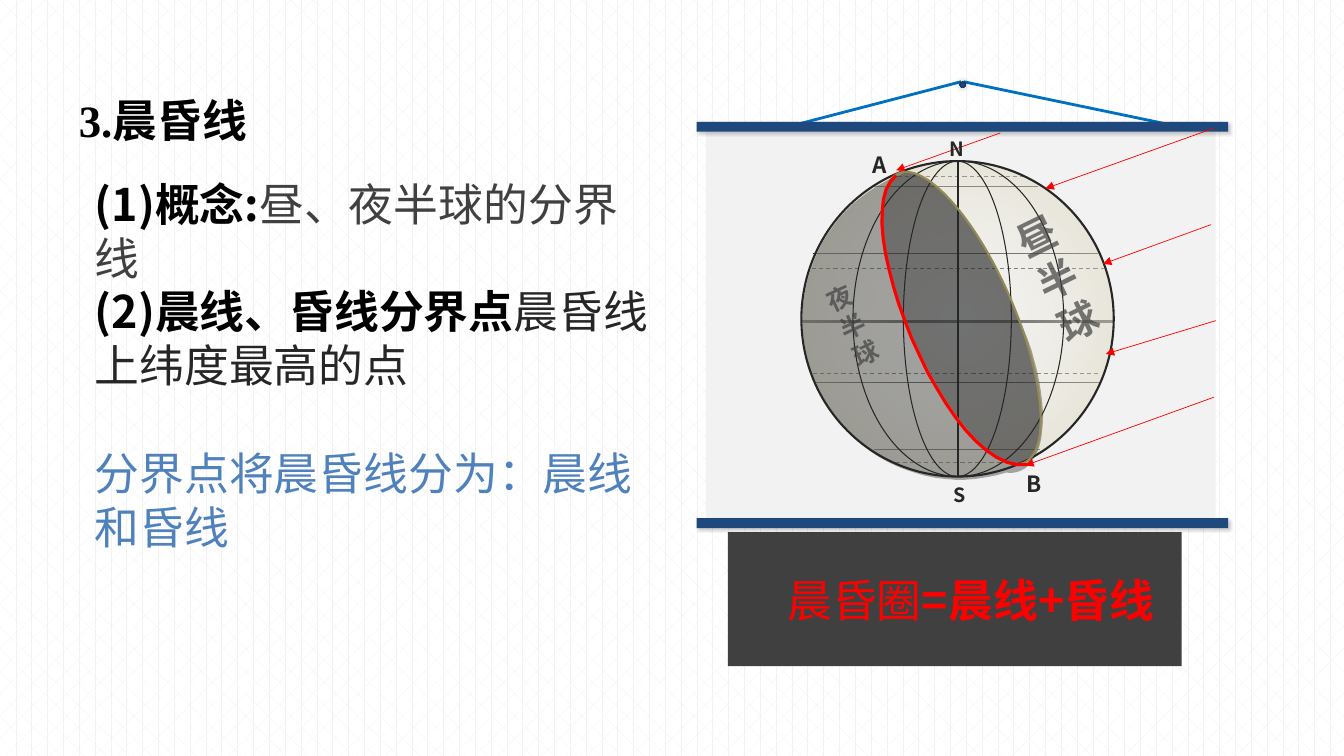
from lxml import etree
from pptx import Presentation
from pptx.dml.color import RGBColor
from pptx.enum.dml import MSO_LINE, MSO_PATTERN
from pptx.enum.shapes import MSO_CONNECTOR, MSO_SHAPE
from pptx.enum.text import MSO_ANCHOR, MSO_AUTO_SIZE, PP_ALIGN
from pptx.oxml.ns import qn
from pptx.util import Cm, Pt

RECTANGLE, ELLIPSE = MSO_SHAPE.RECTANGLE, MSO_SHAPE.OVAL
STRAIGHT, DASH, DIVOT = MSO_CONNECTOR.STRAIGHT, MSO_LINE.DASH, MSO_PATTERN.DIVOT
LEFT, CENTER, JUSTIFY = PP_ALIGN.LEFT, PP_ALIGN.CENTER, PP_ALIGN.JUSTIFY
TOP, NO_FIT = MSO_ANCHOR.TOP, MSO_AUTO_SIZE.NONE

SANS, SERIF = "Noto Sans CJK SC", "Times New Roman"
BLACK, INK, GREY, RED, NAVY = "000000", "262626", "404040", "FF0000", "1F497D"
GLOBE_TOP, GLOBE_HEIGHT = 1.6, 3.13


def inches(value):
    return Cm(round(value * 2.54, 2))


def colour(value):
    return RGBColor.from_string(value)


def set_attributes(target, values):
    for name, value in values.items():
        setattr(target, name, value)


def add_element(parent, tag, **attributes):
    element = etree.SubElement(parent, qn(tag))
    for name, value in attributes.items():
        element.set(name, str(value))
    return element


def add_colour(parent, value, opacity=100):
    element = add_element(parent, "a:srgbClr", val=value)
    if opacity < 100:
        add_element(element, "a:alpha", val=opacity * 1000)


def set_opacity(fill_owner, opacity):
    for element in fill_owner.iterfind(qn("a:solidFill") + "/" + qn("a:srgbClr")):
        add_element(element, "a:alpha", val=opacity * 1000)


def bezier(start, *curves, steps=24):
    points = [start]
    for control_1, control_2, end in curves:
        first = points[-1]
        for step in range(1, steps + 1):
            t = step / steps
            u = 1 - t
            points.append(tuple(
                u**3 * a + 3 * u * u * t * b + 3 * u * t * t * c + t**3 * d
                for a, b, c, d in zip(first, control_1, control_2, end)))
    return points


class SlideBuilder:
    text_size = 32

    def __init__(self, presentation):
        self.slide = presentation.slides.add_slide(presentation.slide_layouts[1])
        self.shapes = self.slide.shapes

    def background(self, front, back):
        fill = self.slide.background.fill
        fill.patterned()
        fill.pattern = DIVOT
        fill.fore_color.rgb = colour(front)
        fill.back_color.rgb = colour(back)

    def fill_text(self, shape, paragraphs, wrap=True, opacity=100, **paragraph_format):
        frame = shape.text_frame
        set_attributes(frame, {"word_wrap": wrap, "auto_size": NO_FIT, "vertical_anchor": TOP})
        for index, runs in enumerate(paragraphs):
            paragraph = frame.add_paragraph() if index else frame.paragraphs[0]
            set_attributes(paragraph, {"alignment": LEFT, "space_before": Pt(0), **paragraph_format})
            for text, fill, font_format in runs:
                run = paragraph.add_run()
                run.text = text
                set_attributes(run.font, {"size": Pt(self.text_size), "name": SANS,
                                          "bold": False, **font_format})
                run.font.color.rgb = colour(fill)
                properties = run._r.get_or_add_rPr()
                if opacity < 100:
                    set_opacity(properties, opacity)
                add_element(properties, "a:ea", typeface=SANS)
        return frame

    def placeholder(self, index, box, paragraphs, **paragraph_format):
        shape = self.slide.placeholders[index]
        set_attributes(shape, dict(zip(("left", "top", "width", "height"), map(inches, box))))
        frame = self.fill_text(shape, paragraphs, **paragraph_format)
        for paragraph in frame.paragraphs:
            properties = paragraph._p.get_or_add_pPr()
            properties.set("marL", "0")
            properties.set("indent", "0")
            add_element(properties, "a:buNone")
        return frame

    def text(self, box, paragraphs, rotation=0, **text_format):
        shape = self.shapes.add_textbox(*map(inches, box))
        shape.rotation = rotation
        self.fill_text(shape, paragraphs, **text_format)

    def paint(self, shape, fill=None, opacity=100, line=None, width=1, stops=None, shadow=None):
        shape.shadow.inherit = False
        properties = shape._element.spPr
        if fill:
            shape.fill.solid()
            shape.fill.fore_color.rgb = colour(fill)
            set_opacity(properties, opacity)
        else:
            shape.fill.background()
        if line:
            shape.line.color.rgb = colour(line)
            shape.line.width = Pt(width)
        else:
            shape.line.fill.background()
        if stops:
            gradient = etree.Element(qn("a:gradFill"))
            stop_list = add_element(gradient, "a:gsLst")
            for position, stop_colour, stop_opacity in stops:
                add_colour(add_element(stop_list, "a:gs", pos=position * 1000), stop_colour, stop_opacity)
            area = add_element(gradient, "a:path", path="circle")
            add_element(area, "a:fillToRect", l=50000, t=50000, r=50000, b=50000)
            properties.replace(properties.find(qn("a:noFill")), gradient)
        if shadow:
            opacity, blur, distance, angle = shadow
            outer = add_element(properties.find(qn("a:effectLst")), "a:outerShdw", blurRad=Pt(blur),
                                dist=Pt(distance), dir=angle * 60000, algn="tl", rotWithShape=0)
            add_colour(outer, BLACK, opacity)

    def shape(self, kind, box, rotation=0, **style):
        shape = self.shapes.add_shape(kind, *map(inches, box))
        shape.rotation = rotation
        self.paint(shape, **style)

    def curve(self, points, close=False, **style):
        points = [(inches(x), inches(y)) for x, y in points]
        builder = self.shapes.build_freeform(*points[0], scale=1.0)
        builder.add_line_segments(points[1:], close=close)
        self.paint(builder.convert_to_shape(), **style)

    def line(self, start, end, fill, width=0.75, dash=None, arrow=False):
        connector = self.shapes.add_connector(STRAIGHT, *map(inches, start + end))
        connector.line.color.rgb = colour(fill)
        set_attributes(connector.line, {"width": Pt(width), "dash_style": dash})
        properties = connector._element.spPr
        if arrow:
            add_element(properties.find(qn("a:ln")), "a:tailEnd", type="triangle")
        add_element(properties, "a:effectLst")


def add_explanation(builder):
    bold = {"bold": True}
    builder.placeholder(0, (0.68, 0.6, 6.67, 0.91),
                        [[("3.晨昏线", BLACK, {"bold": True, "name": SERIF})]],
                        alignment=JUSTIFY, line_spacing=1.5)
    body = builder.placeholder(1, (0.84, 1.7, 5.77, 4.95), [
        [("(1)概念:", BLACK, bold), ("昼、夜半球的分界线", GREY, {})],
        [("(2)晨线、昏线分界点", BLACK, bold), ("晨昏线上纬度最高的点", INK, {})],
        [("分界点将晨昏线分为：晨线和昏线", "4F81BD", {})]])
    body.paragraphs[2].space_before = Pt(38.5)
    builder.shape(RECTANGLE, (7.22, 5.28, 4.5, 1.33), fill=GREY)
    builder.text((7.52, 5.63, 4.22, 0.64),
                 [[("晨昏圈", RED, {}), ("=晨线+昏线", RED, bold)]], alignment=CENTER)


def add_hanging_board(builder):
    builder.shape(RECTANGLE, (7, 1.21, 5.06, 3.93), fill="F2F2F2")
    for start, end in (((7.76, 1.27), (9.53, 0.81)), ((11.77, 1.27), (9.56, 0.81))):
        builder.line(start, end, "0070C0", 2)
    for top in (1.21, 5.14):
        builder.shape(RECTANGLE, (6.91, top, 5.27, 0.1), fill=NAVY, shadow=(20, 2, 2, 45))
    builder.shape(ELLIPSE, (9.52, 0.81, 0.06, 0.06), shadow=(40, 5, 0, 0), stops=[
        (0, NAVY, 100), (23, NAVY, 100), (69, "17375E", 100), (97, "0F243E", 100)])


def add_globe(builder):
    builder.line((7.94, 3.19), (11.04, 3.19), GREY, 1.5)
    for left, right, y in ((8.06, 10.92, 3.7), (8.9, 10.15, 1.75), (8.88, 10.11, 4.59), (8.05, 10.95, 2.66)):
        builder.line((left, y), (right, y), GREY, dash=DASH)
    for left, right, y in ((8.06, 10.89, 2.52), (8.65, 10.29, 1.85), (8.08, 10.91, 3.8), (8.67, 10.31, 4.46)):
        builder.line((left, y), (right, y), INK)
    builder.shape(ELLIPSE, (7.95, GLOBE_TOP, 3.1, GLOBE_HEIGHT), line=INK, width=1.5, stops=[
        (0, "F6F9FC", 35), (29, "EEECE1", 35), (83, "DDD9C3", 65), (100, "DDD9C3", 65)])
    for left, width in ((8.96, 1.07), (8.46, 2.09)):
        builder.shape(ELLIPSE, (left, GLOBE_TOP, width, GLOBE_HEIGHT), line=INK, width=0.75)
    builder.line((9.5, GLOBE_TOP), (9.5, GLOBE_TOP + GLOBE_HEIGHT), INK, 1.5)
    night = bezier((9.98, 4.69), ((9.17, 4.94), (8.31, 4.49), (8.04, 3.68)),
                   ((7.77, 2.86), (8.19, 1.99), (8.99, 1.71)),
                   ((9.35, 1.74), (9.83, 2.43), (10.06, 3.05)),
                   ((10.48, 3.92), (10.42, 4.74), (9.98, 4.69)))
    builder.curve(night, close=True, fill=INK, opacity=39)
    builder.shape(ELLIPSE, (7.97, 2.63, 3.13, 1.05), 66.5, fill=INK, opacity=40, line="948A54", width=1.5)
    terminator = bezier((10.19, 4.61), ((9.39, 4.73), (8.37, 2.11), (8.89, 1.74)))
    builder.curve(terminator, line=RED, width=2.25)
    for start, end in (((12.01, 2.23), (10.94, 2.62)), ((12.06, 3.18), (10.97, 3.51)),
                       ((12.04, 1.27), (10.37, 1.87)), ((9.92, 1.32), (8.89, 1.69)),
                       ((12.04, 3.94), (10.17, 4.62))):
        builder.line(start, end, RED, 0.5, arrow=True)


def add_globe_labels(builder):
    for label, left, top, size in (("N", 9.32, 1.31, 14), ("S", 9.36, 4.74, 14),
                                   ("A", 8.55, 1.45, 16), ("B", 10.08, 4.61, 16)):
        builder.text((left, top, 0.38, 0.36), [[(label, INK, {"size": Pt(size), "bold": True})]], wrap=False)
    for label, box, rotation, size in (("夜半球", (8.18, 2.71, 0.77, 1.51), 335, 18),
                                       ("昼半球", (10.05, 2.01, 0.88, 1.51), 333.9, 28)):
        letters = [[(letter, GREY, {"size": Pt(size), "bold": True})] for letter in label]
        builder.text(box, letters, rotation, opacity=70, alignment=CENTER)


def main():
    presentation = Presentation()
    set_attributes(presentation, {"slide_width": inches(13.33), "slide_height": inches(7.5)})
    builder = SlideBuilder(presentation)
    builder.background("F2F2F2", "FFFFFF")
    for add_part in (add_explanation, add_hanging_board, add_globe, add_globe_labels):
        add_part(builder)
    presentation.save("out.pptx")


if __name__ == "__main__":
    main()
